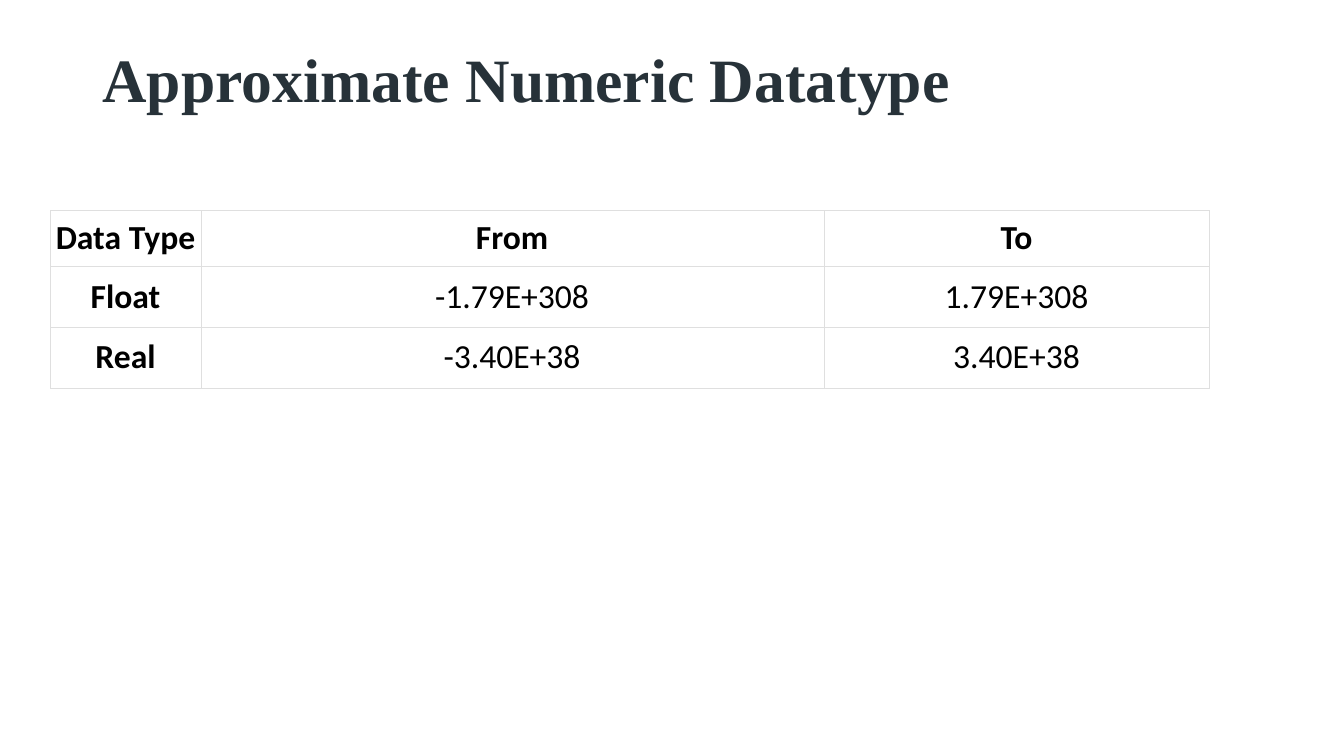
from lxml import etree
from pptx import Presentation
from pptx.dml.color import RGBColor
from pptx.enum import text
from pptx.oxml import ns
from pptx.util import Pt

DARK = RGBColor(0x27, 0x32, 0x39)
BLACK = RGBColor(0, 0, 0)
WHITE = RGBColor(255, 255, 255)
GREY = RGBColor(0xDF, 0xDF, 0xDF)

ROWS = [
    ("Data Type", "From", "To"),
    ("Float", "-1.79E+308", "1.79E+308"),
    ("Real", "-3.40E+38", "3.40E+38"),
]
WIDTHS = (107.3, 445, 275.7)
HEIGHTS = (40, 43, 43)


def write(frame, words, font="Calibri", size=24, color=BLACK, bold=False,
          align=text.PP_ALIGN.CENTER, space=1.0):
    para = frame.paragraphs[0]
    para.alignment = align
    para.line_spacing = space
    run = para.add_run()
    run.text = words
    run.font.name = font
    run.font.size = Pt(size)
    run.font.bold = bold
    run.font.color.rgb = color


def border(cell, color, width):
    props = cell._tc.get_or_add_tcPr()
    for place, side in enumerate(("lnL", "lnR", "lnT", "lnB")):
        line = etree.Element(ns.qn(f"a:{side}"), w=str(Pt(width)))
        fill = etree.SubElement(line, ns.qn("a:solidFill"))
        etree.SubElement(fill, ns.qn("a:srgbClr"), val=str(color))
        props.insert(place, line)


def add_title(slide, words):
    title = slide.shapes.title
    title.left, title.top = Pt(66), Pt(28.8)
    title.width, title.height = Pt(828), Pt(104.4)
    frame = title.text_frame
    frame.word_wrap = True
    frame.auto_size = text.MSO_AUTO_SIZE.NONE
    frame.vertical_anchor = text.MSO_ANCHOR.TOP
    frame.margin_top = Pt(6.7)
    write(frame, words, font="Times New Roman", size=44, color=DARK,
          bold=True, align=text.PP_ALIGN.LEFT, space=0.9)


def add_grid(slide, rows):
    grid = slide.shapes.add_table(
        len(rows), len(WIDTHS), Pt(36), Pt(150.4),
        Pt(sum(WIDTHS)), Pt(sum(HEIGHTS))).table
    grid.horz_banding = False
    for col, width in zip(grid.columns, WIDTHS):
        col.width = Pt(width)
    for row, height in zip(grid.rows, HEIGHTS):
        row.height = Pt(height)
    for r, row in enumerate(rows):
        for c, words in enumerate(row):
            cell = grid.cell(r, c)
            cell.fill.solid()
            cell.fill.fore_color.rgb = WHITE
            cell.vertical_anchor = text.MSO_ANCHOR.MIDDLE
            cell.margin_left = cell.margin_right = Pt(3 if r == c == 0 else 5)
            cell.margin_top = cell.margin_bottom = Pt(7 if r else 5)
            border(cell, GREY, 0.15)
            write(cell.text_frame, words, bold=r == 0 or c == 0)


def main():
    deck = Presentation()
    deck.slide_width, deck.slide_height = Pt(960), Pt(540)
    slide = deck.slides.add_slide(deck.slide_layouts[5])
    add_title(slide, "Approximate Numeric Datatype")
    add_grid(slide, ROWS)
    deck.save("out.pptx")


if __name__ == "__main__":
    main()
